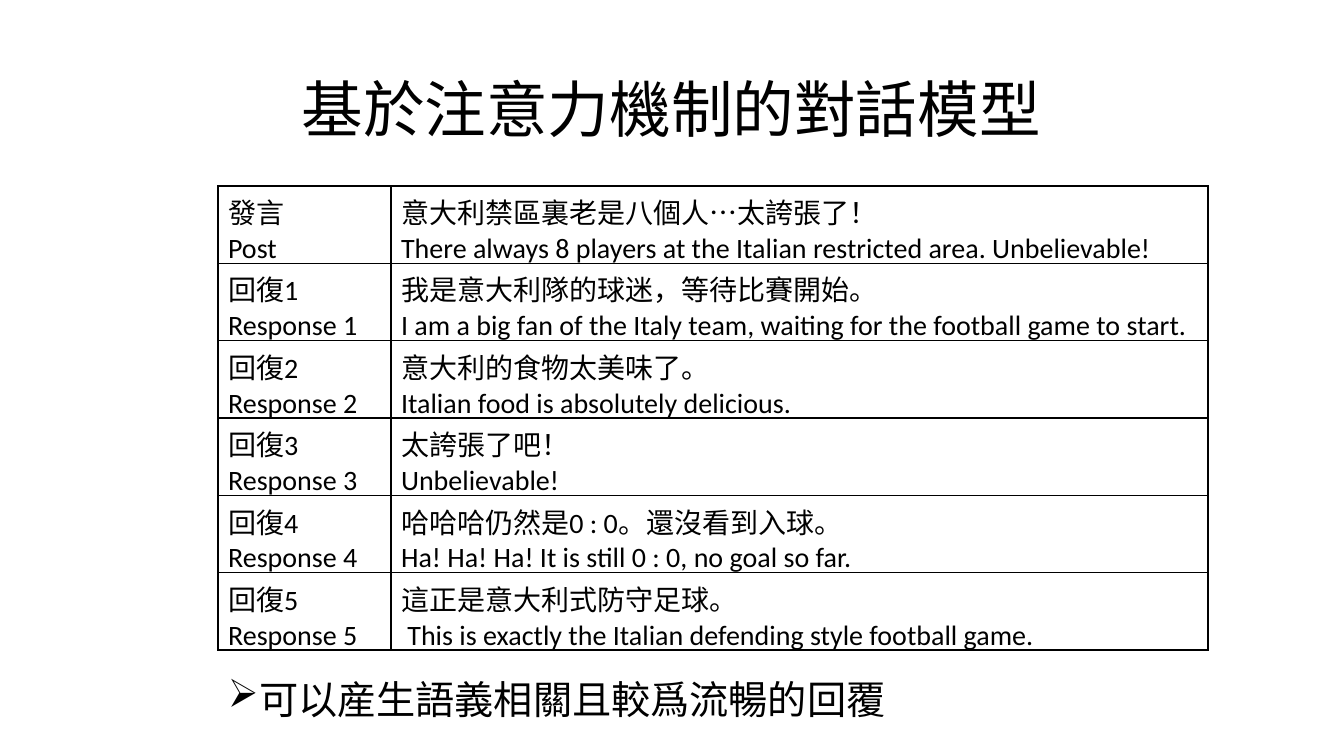
from lxml import etree
from pptx import Presentation
from pptx.dml.color import RGBColor
from pptx.enum.text import MSO_ANCHOR, PP_ALIGN
from pptx.oxml.ns import qn
from pptx.util import Emu, Pt

MIDDLE = MSO_ANCHOR.MIDDLE
CENTER = PP_ALIGN.CENTER
LEFT = PP_ALIGN.LEFT
EMU_PER_PX = 914400 / 100.8
BLACK = "000000"
LATIN_FONT = "Calibri"
CHINESE_FONT = "Noto Sans CJK TC"
COLUMN_WIDTHS = [173, 817]
ROW_HEIGHT = 77

DIALOGUE = [
    ("發言\nPost",
     "意大利禁區裏老是八個人…太誇張了！\n"
     "There always 8 players at the Italian restricted area. Unbelievable!"),
    ("回復1\nResponse 1",
     "我是意大利隊的球迷，等待比賽開始。\n"
     "I am a big fan of the Italy team, waiting for the football game to start."),
    ("回復2\nResponse 2", "意大利的食物太美味了。\nItalian food is absolutely delicious."),
    ("回復3\nResponse 3", "太誇張了吧！\nUnbelievable!"),
    ("回復4\nResponse 4",
     "哈哈哈仍然是0 : 0。還沒看到入球。\nHa! Ha! Ha! It is still 0 : 0, no goal so far."),
    ("回復5\nResponse 5",
     "這正是意大利式防守足球。\n This is exactly the Italian defending style football game."),
]


def px(length):
    return Emu(round(length * EMU_PER_PX))


def color(value):
    return RGBColor.from_string(value)


def style_text(frame, size, font):
    for para in frame.paragraphs:
        for span in para.runs:
            span.font.size = Pt(size)
            span.font.name = font
            span.font.color.rgb = color(BLACK)
            if font == CHINESE_FONT:
                east_asian = etree.SubElement(span.font._element, qn("a:ea"))
                east_asian.set("typeface", font)


def add_text(page, left, top, width, height, text, size, align):
    box = page.shapes.add_textbox(px(left), px(top), px(width), px(height))
    frame = box.text_frame
    frame.word_wrap = True
    frame.text = text
    style_text(frame, size, CHINESE_FONT)
    frame.paragraphs[0].alignment = align
    return frame


def add_bullet(para, mark, indent):
    properties = para._p.get_or_add_pPr()
    properties.set("marL", str(px(indent)))
    properties.set("indent", str(-px(indent)))
    etree.SubElement(properties, qn("a:buChar")).set("char", mark)


def add_borders(cell):
    properties = cell._tc.get_or_add_tcPr()
    for position, side in enumerate(("a:lnL", "a:lnR", "a:lnT", "a:lnB")):
        line = etree.Element(qn(side), w=str(Pt(1)))
        fill = etree.SubElement(line, qn("a:solidFill"))
        etree.SubElement(fill, qn("a:srgbClr"), val=BLACK)
        properties.insert(position, line)


def add_dialogue_table(page, left, top):
    frame = page.shapes.add_table(
        len(DIALOGUE), len(COLUMN_WIDTHS), px(left), px(top),
        px(sum(COLUMN_WIDTHS)), px(ROW_HEIGHT * len(DIALOGUE)))
    table = frame.table
    table.first_row = False
    table.horz_banding = False
    for column, width in zip(table.columns, COLUMN_WIDTHS):
        column.width = px(width)
    for row, texts in zip(table.rows, DIALOGUE):
        row.height = px(ROW_HEIGHT)
        for cell, text in zip(row.cells, texts):
            cell.text_frame.text = text
            style_text(cell.text_frame, 20, LATIN_FONT)
            cell.fill.background()
            add_borders(cell)


def main():
    deck = Presentation()
    deck.slide_width, deck.slide_height = px(1344), px(756)
    page = deck.slides.add_slide(deck.slide_layouts[6])
    title = add_text(page, 92, 40, 1159, 146, "基於注意力機制的對話模型", 44, CENTER)
    title.vertical_anchor = MIDDLE
    title.paragraphs[0].line_spacing = 0.9
    summary = add_text(page, 218, 670, 732, 57, "可以産生語義相關且較爲流暢的回覆", 28, LEFT)
    add_bullet(summary.paragraphs[0], "➢", 31)
    add_dialogue_table(page, 218, 186)
    deck.save("out.pptx")


if __name__ == "__main__":
    main()
